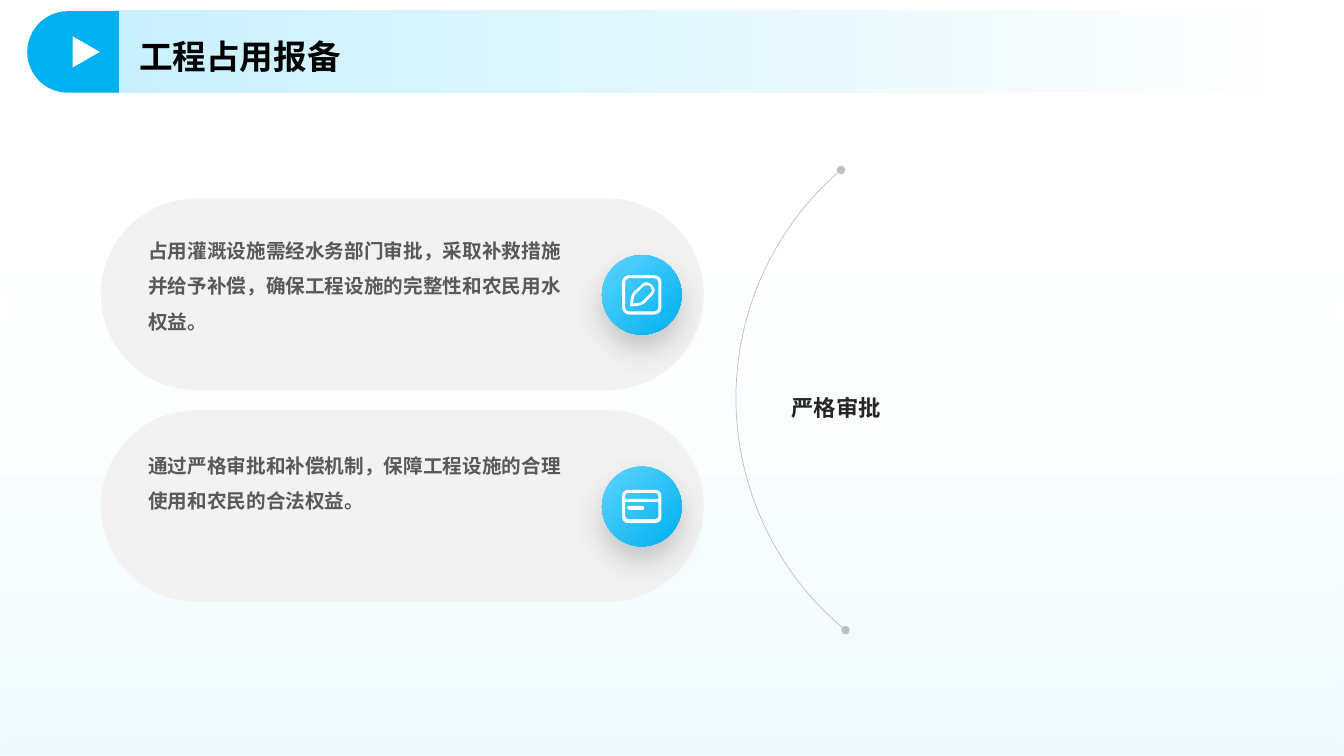
"""Build a slide on approval and compensation for occupying irrigation works."""
from pptx import Presentation
from pptx import util as u
from pptx.dml.color import RGBColor
from pptx.enum import shapes, text
from pptx.oxml.ns import qn
from lxml import etree

PX = 9144
FONT = "Noto Sans CJK SC"
COLORS = {
    "sky": "00B0F0", "light_sky": "5DD4FF", "pale": "C9F1FF", "mist": "93E2FF",
    "card": "F2F2F2", "rule": "BFBFBF", "body": "595959", "label": "262626",
    "title": "000000", "white": "FFFFFF",
}


def rgb(name):
    """Return the named colour."""
    return RGBColor.from_string(COLORS[name])


def px(*lengths):
    """Turn px lengths into EMU."""
    return [round(length * PX) for length in lengths]


def add_child(parent, tag, **attributes):
    """Append a DrawingML child with attributes."""
    child = etree.SubElement(parent, qn(tag))
    for key, value in attributes.items():
        child.set(key, str(value))
    return child


def paint(item, color):
    """Give a shape a plain fill without line or shadow."""
    item.shadow.inherit = False
    item.line.fill.background()
    item.fill.solid()
    item.fill.fore_color.rgb = rgb(color)


def add_solid(slide, kind, box, color, adjust=(), turn=0):
    """Add a borderless preset shape with a plain fill."""
    solid = slide.shapes.add_shape(kind, *px(*box))
    paint(solid, color)
    solid.rotation = turn
    for index, value in enumerate(adjust):
        solid.adjustments[index] = value


def add_gradient(slide, kind, box, stops, angle=0):
    """Add a shape with a two-stop gradient of (position, colour, opacity)."""
    blend = slide.shapes.add_shape(kind, *px(*box))
    blend.shadow.inherit = False
    blend.line.fill.background()
    blend.fill.gradient()
    blend.fill.gradient_angle = (360 - angle) % 360
    for stop, (position, color, _) in zip(blend.fill.gradient_stops, stops):
        stop.position = position
        stop.color.rgb = rgb(color)
    tints = blend._element.spPr.find(qn("a:gradFill")).iter(qn("a:srgbClr"))
    for tint, (_, _, opacity) in zip(tints, stops):
        if opacity < 100:
            add_child(tint, "a:alpha", val=opacity * 1000)
    return blend


def add_words(slide, box, words, size, color, spacing, grow=False):
    """Add a bold, vertically centred text box."""
    frame = slide.shapes.add_textbox(*px(*box)).text_frame
    frame.word_wrap = True
    frame.vertical_anchor = text.MSO_ANCHOR.MIDDLE
    frame.margin_left = frame.margin_right = frame.margin_top = frame.margin_bottom = 0
    if grow:
        frame.auto_size = text.MSO_AUTO_SIZE.SHAPE_TO_FIT_TEXT
    paragraph = frame.paragraphs[0]
    paragraph.line_spacing = spacing
    run = paragraph.add_run()
    run.text = words
    run.font.size = u.Pt(size)
    run.font.bold = True
    run.font.name = FONT
    run.font.color.rgb = rgb(color)
    add_child(run.font._element, "a:ea", typeface=FONT)


def add_arc(slide, box, start, end):
    """Add a mirrored arc with round ends."""
    arc = slide.shapes.add_shape(shapes.MSO_SHAPE.ARC, *px(*box))
    arc.shadow.inherit = False
    arc.fill.background()
    arc.adjustments[0], arc.adjustments[1] = start, end
    arc.line.color.rgb = rgb("rule")
    arc.line.width = u.Pt(0.5)
    arc._element.spPr.find(qn("a:xfrm")).set("flipH", "1")
    stroke = arc._element.spPr.find(qn("a:ln"))
    for tip in ("a:headEnd", "a:tailEnd"):
        add_child(stroke, tip, type="oval")


def rounded(left, top, width, height, top_radius, bottom_radius):
    """Return the outline of a box with rounded corners."""
    right, bottom = left + width, top + height
    corners = (
        (right, top, -1, 0, 0, 1, top_radius),
        (right, bottom, 0, -1, -1, 0, bottom_radius),
        (left, bottom, 1, 0, 0, -1, bottom_radius),
        (left, top, 0, 1, 1, 0, top_radius),
    )
    outline = [(left + top_radius, top)]
    for x, y, in_x, in_y, out_x, out_y, radius in corners:
        near = 0.45 * radius
        outline.append((x + in_x * radius, y + in_y * radius))
        if radius:
            outline.append((x + in_x * near, y + in_y * near, x + out_x * near,
                            y + out_y * near, x + out_x * radius, y + out_y * radius))
    return outline


def add_icon(slide, box, outlines):
    """Add a white freeform of closed outlines with lines and cubic curves."""
    left, top, width, height = px(*box)
    builder = slide.shapes.build_freeform(left, top)
    builder.add_line_segments([(left + width, top), (left + width, top + height),
                               (left, top + height)])
    icon = builder.convert_to_shape()
    paint(icon, "white")
    route = next(icon._element.iter(qn("a:path")))
    for step in list(route):
        route.remove(step)
    for outline in outlines:
        for index, numbers in enumerate(outline):
            tag = "a:moveTo" if index == 0 else "a:lnTo" if len(numbers) == 2 else "a:cubicBezTo"
            step = add_child(route, tag)
            spots = px(*numbers)
            for x, y in zip(spots[::2], spots[1::2]):
                add_child(step, "a:pt", x=x, y=y)
        add_child(route, "a:close")


def add_card(slide, top, words, words_top, words_height, icon_height, outlines):
    """Add a pill card with its text and a round icon badge."""
    add_solid(slide, shapes.MSO_SHAPE.ROUNDED_RECTANGLE, (100, top, 598, 190), "card", (0.5,))
    badge = add_gradient(slide, shapes.MSO_SHAPE.OVAL, (597, top + 56, 79, 79),
                         ((0, "light_sky", 100), (1, "sky", 100)), 45)
    effects = badge._element.spPr.find(qn("a:effectLst"))
    shadow = add_child(effects, "a:outerShdw", blurRad=u.Pt(20), dist=u.Pt(10),
                       dir=90 * 60000, algn="t", rotWithShape=0)
    tint = add_child(shadow, "a:srgbClr", val=COLORS["body"])
    add_child(tint, "a:alpha", val=30000)
    add_words(slide, (147, words_top, 421, words_height), words, 14, "body", 1.5, True)
    icon_top = top + 95 - icon_height // 2
    add_icon(slide, (617, icon_top, 39, icon_height), outlines)


def add_header(slide):
    """Add the title band with its play tab."""
    add_gradient(slide, shapes.MSO_SHAPE.ROUNDED_RECTANGLE, (100, 11, 1160, 81),
                 ((0, "pale", 100), (1, "pale", 0)))
    add_words(slide, (138, 27, 851, 54), "工程占用报备", 24, "title", 1.1)
    add_solid(slide, shapes.MSO_SHAPE.ROUND_2_SAME_RECTANGLE, (32, 6, 81, 91), "sky", (0.5, 0), 270)
    add_solid(slide, shapes.MSO_SHAPE.ISOSCELES_TRIANGLE, (70, 38, 31, 27), "white", turn=90)


def main():
    """Build and save the slide."""
    deck = Presentation()
    deck.slide_width, deck.slide_height = px(1333, 750)
    slide = deck.slides.add_slide(deck.slide_layouts[6])
    add_gradient(slide, shapes.MSO_SHAPE.RECTANGLE, (0, -1, 1333, 751),
                 ((0.35, "pale", 0), (1, "mist", 15)), 90)
    add_arc(slide, (730, 97, 596, 596), 186.34, 30.33)
    pen = [
        [(24, 10), (23, 10, 22, 10, 21, 11), (13, 19), (12, 20, 11, 24, 11, 28),
         (15, 28, 19, 27, 20, 26), (28, 18), (30, 17, 30, 13, 28, 11), (27, 10, 26, 10, 24, 10)],
        [(24, 7), (26, 7, 28, 8, 30, 10), (33, 13, 33, 17, 30, 20), (22, 28),
         (19, 31, 8, 31, 8, 31), (8, 31, 8, 20, 11, 17), (19, 10), (20, 8, 22, 7, 24, 7)],
        rounded(3, 3, 33, 33, 4, 4),
        rounded(0, 0, 39, 39, 7, 7),
    ]
    permit = [
        rounded(5, 16, 17, 4, 2, 2),
        rounded(3, 12, 33, 17, 0, 3),
        rounded(3, 3, 33, 6, 3, 0),
        rounded(0, 0, 39, 33, 6, 6),
    ]
    add_card(slide, 197, "占用灌溉设施需经水务部门审批，采取补救措施并给予补偿，确保工程设施的完整性和农民用水权益。",
             225, 106, 39, pen)
    add_card(slide, 407, "通过严格审批和补偿机制，保障工程设施的合理使用和农民的合法权益。",
             438, 71, 33, permit)
    add_words(slide, (785, 250, 470, 296), "严格审批", 16, "label", 1.5)
    add_header(slide)
    deck.save("out.pptx")


if __name__ == "__main__":
    main()
